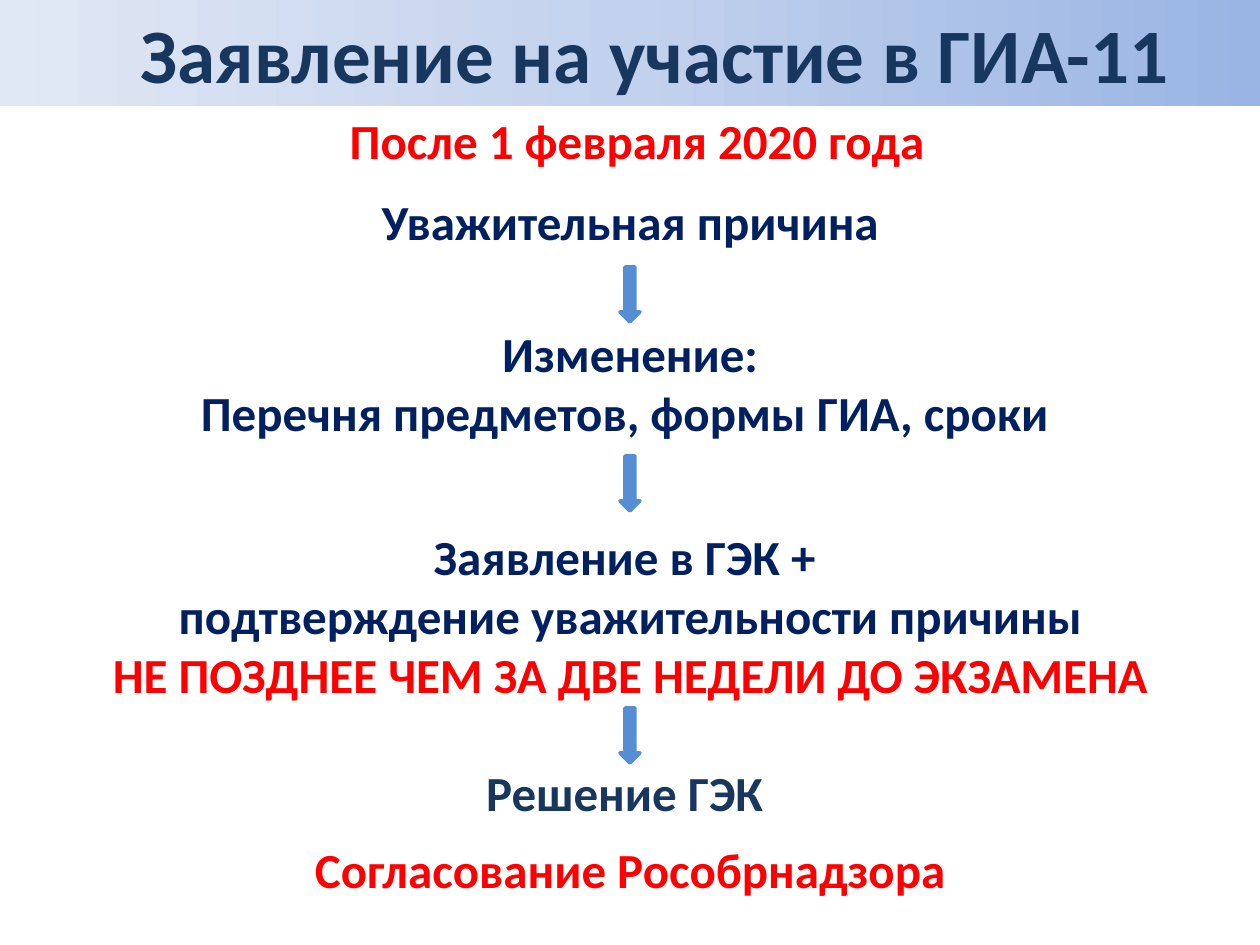
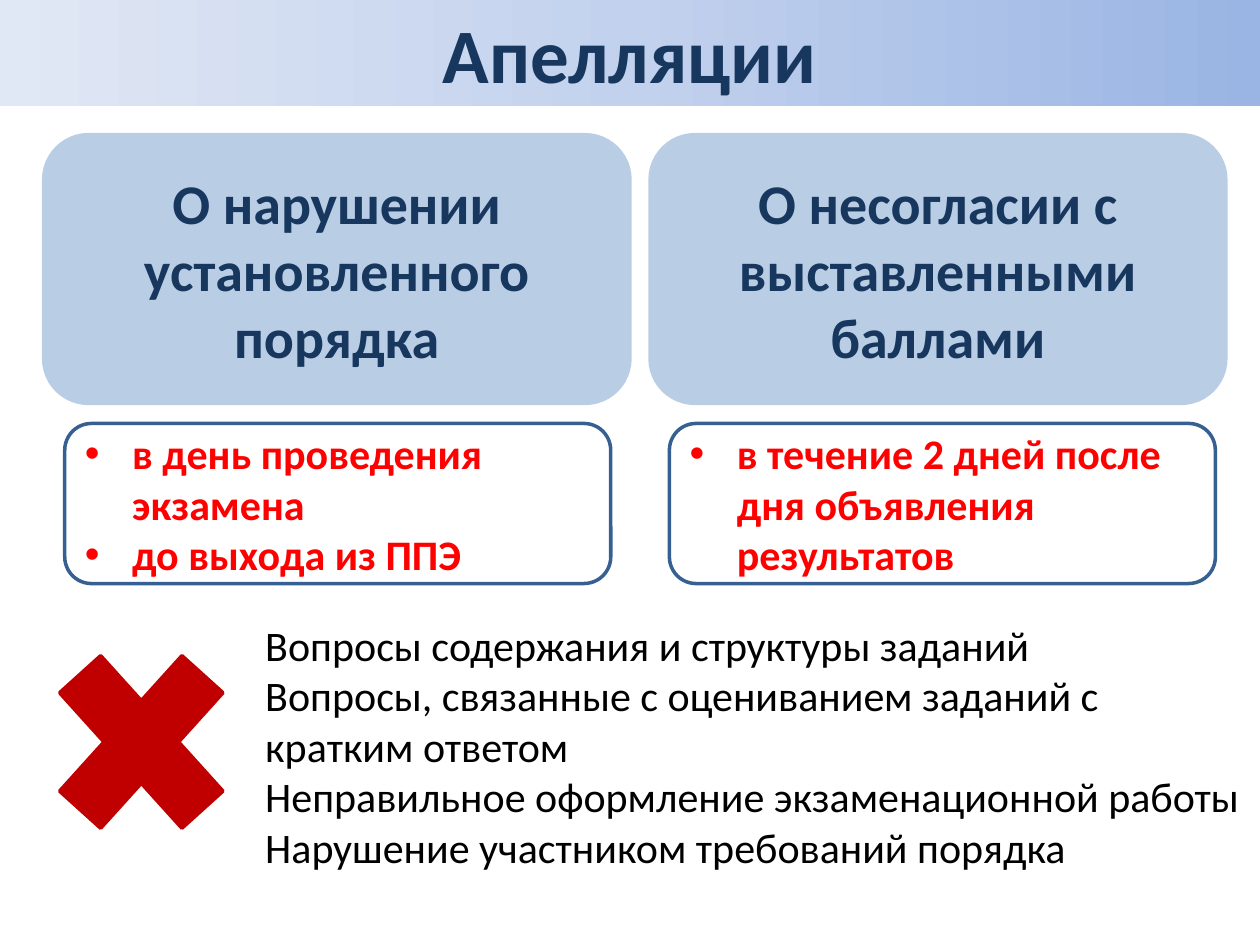
from pptx import Presentation
from pptx.dml.color import RGBColor as Rgb
from pptx.enum.shapes import MSO_SHAPE as Kind
from pptx.enum.text import MSO_ANCHOR as Anchor, PP_ALIGN as Align
from pptx.oxml.ns import qn
from pptx.util import Pt
from lxml.etree import SubElement as Sub

HUES = {
    "title": "17375E", "navy": "002060", "red": "FF0000", "black": "000000",
    "arrow": "558ED5", "card": "B9CDE5", "edge": "376092", "cross": "C00000",
}
BAND = [(0, "9AB5E4"), (50, "C2D1ED"), (100, "E1E8F5")]
FONT = "Calibri"
WIDE, HIGH, HEAD = 720, 540, 60.5

APPLY = "Заявление на участие в ГИА-11"
STEPS = [
    (187, 59.5, 354, "red", ["После 1 февраля 2020 года"]),
    (20, 106, 680, "navy", ["Уважительная причина"]),
    (20, 181.5, 680, "navy", ["Изменение:", "Перечня предметов, формы ГИА, сроки "]),
    (20, 297.5, 680, "navy", [
        "Заявление в ГЭК + ",
        "подтверждение уважительности причины",
        ("НЕ ПОЗДНЕЕ ЧЕМ ЗА ДВЕ НЕДЕЛИ ДО ЭКЗАМЕНА", "red"),
    ]),
    (20, 432, 680, "title", ["Решение ГЭК "]),
    (127.5, 476, 465, "red", ["Согласование Рособрнадзора"]),
]
ARROWS = [152.5, 260.5, 404.5]

APPEAL = "Апелляции"
CARDS = [
    (25, 335, "О нарушении установленного порядка",
     37, ["в день проведения экзамена", "до выхода из ППЭ"]),
    (371.5, 329, "О несогласии с выставленными баллами",
     382.5, ["в течение 2 дней после дня объявления результатов"]),
]
REFUSED = [
    "Вопросы содержания и структуры заданий",
    "Вопросы, связанные с оцениванием заданий с кратким ответом",
    "Неправильное оформление экзаменационной работы",
    "Нарушение участником требований порядка",
]


def hue(name):
    return Rgb.from_string(HUES[name])


def write(shape, lines, size=28, color="navy", bold=True, align=Align.CENTER,
          anchor=Anchor.TOP, indent=0, bullet=False):
    frame = shape.text_frame
    frame.word_wrap = True
    frame.vertical_anchor = anchor
    for i, line in enumerate(lines):
        words, tint = line if isinstance(line, tuple) else (line, color)
        para = frame.add_paragraph() if i else frame.paragraphs[0]
        para.alignment = align
        run = para.add_run()
        run.text = words
        font = run.font
        font.name, font.size, font.bold = FONT, Pt(size), bold
        font.color.rgb = hue(tint)
        props = para._p.get_or_add_pPr()
        if indent:
            props.set("marL", str(Pt(indent)))
        if bullet:
            props.set("indent", str(Pt(-indent)))
            Sub(props, qn("a:buFont")).set("typeface", "Arial")
            Sub(props, qn("a:buChar")).set("char", "•")


def label(slide, x, y, w, h, lines, **style):
    write(slide.shapes.add_textbox(Pt(x), Pt(y), Pt(w), Pt(h)), lines, **style)


def draw(slide, kind, x, y, w, h, fill=None, line=None):
    shape = slide.shapes.add_shape(kind, Pt(x), Pt(y), Pt(w), Pt(h))
    shape.shadow.inherit = False
    if fill:
        shape.fill.solid()
        shape.fill.fore_color.rgb = hue(fill)
    else:
        shape.fill.background()
    if line:
        shape.line.color.rgb = hue(line)
        shape.line.width = Pt(2)
    else:
        shape.line.fill.background()
    return shape


def start(deck, title, indent=0):
    slide = deck.slides.add_slide(deck.slide_layouts[6])
    band = draw(slide, Kind.RECTANGLE, 0, 0, WIDE, HEAD)
    band.fill.gradient()
    band.fill.gradient_angle = 180
    stops = band._element.spPr.find(".//" + qn("a:gsLst"))
    for stop in list(stops):
        stops.remove(stop)
    for pos, code in BAND:
        stop = Sub(stops, qn("a:gs"), pos=str(pos * 1000))
        Sub(stop, qn("a:srgbClr"), val=code)
    write(band, [title], size=44, color="title", indent=indent)
    return slide


def apply(deck):
    slide = start(deck, APPLY, indent=29)
    for x, y, w, color, lines in STEPS:
        label(slide, x, y, w, 7 + 34 * len(lines), lines, color=color)
    for y in ARROWS:
        draw(slide, Kind.DOWN_ARROW, 354.25, y, 11.5, 31.5, "arrow", "arrow")


def appeal(deck):
    slide = start(deck, APPEAL)
    for x, w, name, left, terms in CARDS:
        card = draw(slide, Kind.ROUNDED_RECTANGLE, x, 77, w, 153.5, "card", "card")
        write(card, [name], size=32, color="title", anchor=Anchor.MIDDLE)
        box = draw(slide, Kind.ROUNDED_RECTANGLE, left, 242, 312, 91.5, line="edge")
        write(box, terms, size=24, color="red", align=Align.LEFT,
              anchor=Anchor.MIDDLE, indent=27, bullet=True)
    label(slide, 144.5, 350.5, 575.5, 152.5, REFUSED, size=24, color="black",
          bold=False, align=Align.LEFT)
    draw(slide, Kind.MATH_MULTIPLY, 13.5, 349.5, 134.5, 149, "cross", "cross")


def main():
    deck = Presentation()
    deck.slide_width, deck.slide_height = Pt(WIDE), Pt(HIGH)
    apply(deck)
    appeal(deck)
    deck.save("out.pptx")


if __name__ == "__main__":
    main()
